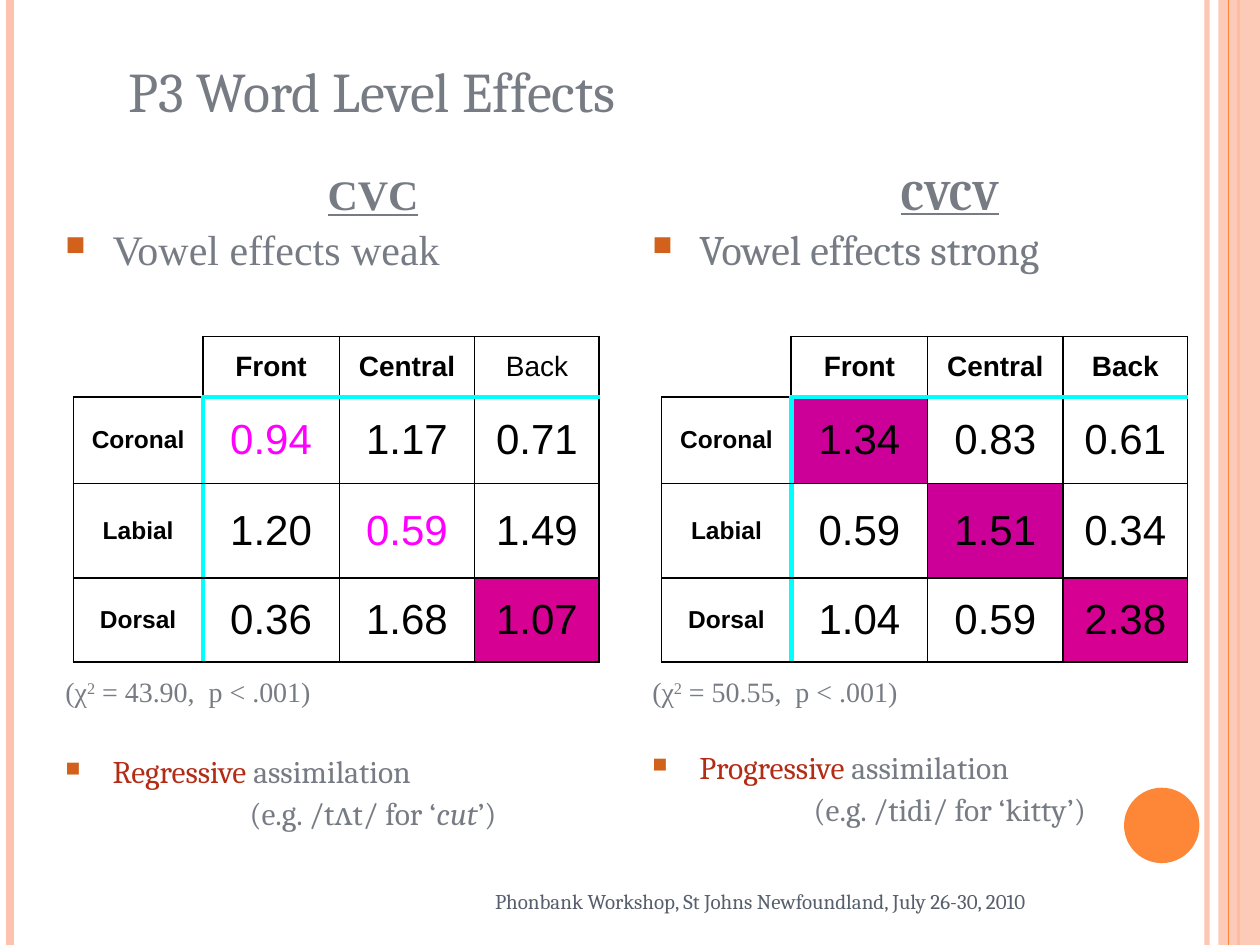
from lxml.etree import SubElement
from pptx import Presentation
from pptx.dml.color import RGBColor
from pptx.enum.shapes import MSO_CONNECTOR as Connector, MSO_SHAPE as Shape
from pptx.enum.text import MSO_ANCHOR as Anchor, PP_ALIGN as Align
from pptx.oxml.ns import qn
from pptx.util import Cm, Pt

TITLE = "P3 Word Level Effects"
FOOTER = "Phonbank Workshop, St Johns Newfoundland, July 26-30, 2010"
GREY, RED, BLACK, CYAN = "777C84", "B32C16", "000000", "00FFFF"
PINK, ORANGE, MAGENTA = "FEC3AE", "FE8637", "FF00FF"
SERIF, TIMES, SANS = "Cambria", "Times New Roman", "Arial"

VOWELS = ["Front", "Central", "Back"]
PLACES = ["Coronal", "Labial", "Dorsal"]
COLUMNS = [2.61, 2.75, 2.73, 2.51]
ROWS = [1.22, 1.75, 1.9, 1.7]

# Highlights are keyed by (row, column) in the table.
PANELS = [
    {
        "left": 1.07, "width": 12.9, "table_left": 1.48, "font": TIMES,
        "heading": "CVC", "claim": "Vowel effects weak", "chi": "43.90",
        "kind": "Regressive", "gap": 27.5,
        "example": [("(e.g. /tʌt/ for ‘", {}), ("cut", {"italic": True}), ("’)", {})],
        "values": [["0.94", "1.17", "0.71"], ["1.20", "0.59", "1.49"], ["0.36", "1.68", "1.07"]],
        "inks": {(1, 1): MAGENTA, (2, 2): MAGENTA},
        "fills": {(3, 3): "D60093"}, "plain": {(0, 3)},
    },
    {
        "left": 12.9, "width": 12.5, "table_left": 13.34, "font": SERIF,
        "heading": "CVCV", "claim": "Vowel effects strong", "chi": "50.55",
        "kind": "Progressive", "gap": 25,
        "example": [("(e.g. /tidi/ for ‘kitty’)", {})],
        "values": [["1.34", "0.83", "0.61"], ["0.59", "1.51", "0.34"], ["1.04", "0.59", "2.38"]],
        "inks": {},
        "fills": {(1, 1): "CC0099", (2, 2): "CC0099", (3, 3): "D60093"}, "plain": set(),
    },
]

# Horizontal position in cm, colour, width in pt, opacity in percent
BACK_STRIPES = [(24.33, PINK, 3, 93), (0.2, PINK, 4.5, 100), (24.97, ORANGE, 1.5, 100)]
FRONT_STRIPE = (24.77, ORANGE, 0.75, 100)


def color(hex_text):
    return RGBColor.from_string(hex_text)


def set_opacity(fill_parent, percent):
    if percent < 100:
        tint = next(fill_parent.iter(qn("a:srgbClr")))
        SubElement(tint, qn("a:alpha"), val=str(percent * 1000))


def write(para, text, *, size, font=SERIF, ink=GREY, bold=False, italic=False,
          underline=False, raised=0):
    span = para.add_run()
    span.text = text
    style = span.font
    style.size, style.name = Pt(size), font
    style.bold, style.italic, style.underline = bold, italic, underline
    style.color.rgb = color(ink)
    if raised:
        style._element.set("baseline", str(raised * 1000))


def add_stripe(page, x, ink, width, opacity):
    line = page.shapes.add_connector(Connector.STRAIGHT, Cm(x), 0, Cm(x), Cm(19.05))
    line.line.color.rgb = color(ink)
    line.line.width = Pt(width)
    properties = line._element.spPr
    set_opacity(properties, opacity)
    SubElement(properties, qn("a:effectLst"))


def add_block(page, kind, left, top, width, height, ink, opacity=100):
    block = page.shapes.add_shape(kind, Cm(left), Cm(top), Cm(width), Cm(height))
    block.shadow.inherit = False
    block.fill.solid()
    block.fill.fore_color.rgb = color(ink)
    block.line.fill.background()
    set_opacity(block._element.spPr, opacity)


def add_panel_text(page, panel):
    box = page.shapes.add_textbox(Cm(panel["left"]), Cm(3.38), Cm(panel["width"]), Cm(13.77))
    frame = box.text_frame
    frame.word_wrap = True
    big = {"size": 24, "font": panel["font"]}
    note = {"size": 16, "font": TIMES}
    # Space before in pt, centred, bulleted, spans
    lines = [
        (5.5, True, False, [(panel["heading"], {**big, "bold": True, "underline": True})]),
        (5.5, False, True, [(panel["claim"], big)]),
        (231, False, False, [("(χ", note), ("2", {**note, "raised": 30}),
                             (f" = {panel['chi']},  p < .001)", note)]),
        (panel["gap"], False, True, [(panel["kind"], {"size": 18, "ink": RED}),
                                     (" assimilation", {"size": 18})]),
        (4.3, True, False, [(text, {"size": 18, **look}) for text, look in panel["example"]]),
    ]
    for number, (before, centred, bulleted, spans) in enumerate(lines):
        para = frame.add_paragraph() if number else frame.paragraphs[0]
        para.alignment = Align.CENTER if centred else Align.LEFT
        para.line_spacing = 0.9
        para.space_before = Pt(before)
        properties = para._p.get_or_add_pPr()
        properties.set("marL", str(Cm(0.95)))
        properties.set("indent", str(-Cm(0.95)))
        if bulleted:
            SubElement(SubElement(properties, qn("a:buClr")), qn("a:srgbClr"), val="D2611C")
            SubElement(properties, qn("a:buSzPct"), val="65000")
            SubElement(properties, qn("a:buChar"), char="■")
        for text, look in spans:
            write(para, text, **look)


def set_borders(cell, row, column):
    """Cyan between headers and values, black elsewhere, open top-left corner."""
    inner_row, inner_column = row > 0, column > 0
    sides = {
        "L": CYAN if column == 1 and inner_row else BLACK,
        "R": CYAN if column == 0 and inner_row else BLACK,
        "T": CYAN if row == 1 and inner_column else BLACK,
        "B": CYAN if row == 0 and inner_column else BLACK,
    }
    if row == column == 0:
        sides["L"] = sides["T"] = None
    properties = cell._tc.get_or_add_tcPr()
    for index, (side, ink) in enumerate(sides.items()):
        edge = SubElement(properties, qn(f"a:ln{side}"), w=str(Pt(3 if ink == CYAN else 1)))
        if ink:
            SubElement(SubElement(edge, qn("a:solidFill")), qn("a:srgbClr"), val=ink)
        else:
            SubElement(edge, qn("a:noFill"))
        properties.insert(index, edge)


def add_ratio_table(page, panel):
    grid = [["", *VOWELS]] + [[place, *row] for place, row in zip(PLACES, panel["values"])]
    table = page.shapes.add_table(len(ROWS), len(COLUMNS), Cm(panel["table_left"]), Cm(6.78),
                                  Cm(sum(COLUMNS)), Cm(sum(ROWS))).table
    table.first_row = table.horz_banding = False
    for column, width in zip(table.columns, COLUMNS):
        column.width = Cm(width)
    for row, height in zip(table.rows, ROWS):
        row.height = Cm(height)
    for r, texts in enumerate(grid):
        for c, text in enumerate(texts):
            cell, spot = table.cell(r, c), (r, c)
            cell.vertical_anchor = Anchor.MIDDLE
            if spot in panel["fills"]:
                cell.fill.solid()
                cell.fill.fore_color.rgb = color(panel["fills"][spot])
            else:
                cell.fill.background()
            set_borders(cell, r, c)
            if text:
                para = cell.text_frame.paragraphs[0]
                para.alignment = Align.CENTER
                header = r == 0 or c == 0
                write(para, text, size=16 if r == 0 else 14 if c == 0 else 24, font=SANS,
                      ink=panel["inks"].get(spot, BLACK),
                      bold=header and spot not in panel["plain"])


def main():
    deck = Presentation()
    deck.slide_width, deck.slide_height = Cm(25.4), Cm(19.05)
    page = deck.slides.add_slide(deck.slide_layouts[5])

    for stripe in BACK_STRIPES:
        add_stripe(page, *stripe)
    add_block(page, Shape.RECTANGLE, 24.56, 0, 0.84, 19.05, PINK, opacity=87)
    add_stripe(page, *FRONT_STRIPE)
    add_block(page, Shape.OVAL, 22.66, 15.88, 1.52, 1.52, ORANGE)

    title = page.shapes.title
    title.left, title.top, title.width, title.height = Cm(2.34), Cm(0.64), Cm(20.96), Cm(2.34)
    title.text_frame.vertical_anchor = Anchor.MIDDLE
    para = title.text_frame.paragraphs[0]
    para.alignment = Align.LEFT
    write(para, TITLE, size=32)

    for panel in PANELS:
        add_panel_text(page, panel)
        add_ratio_table(page, panel)

    footer = page.shapes.add_textbox(Cm(9.73), Cm(17.78), Cm(13.1), Cm(0.8))
    footer.text_frame.word_wrap = False
    write(footer.text_frame.paragraphs[0], FOOTER, size=12, ink="575F6D")
    deck.save("out.pptx")


if __name__ == "__main__":
    main()
